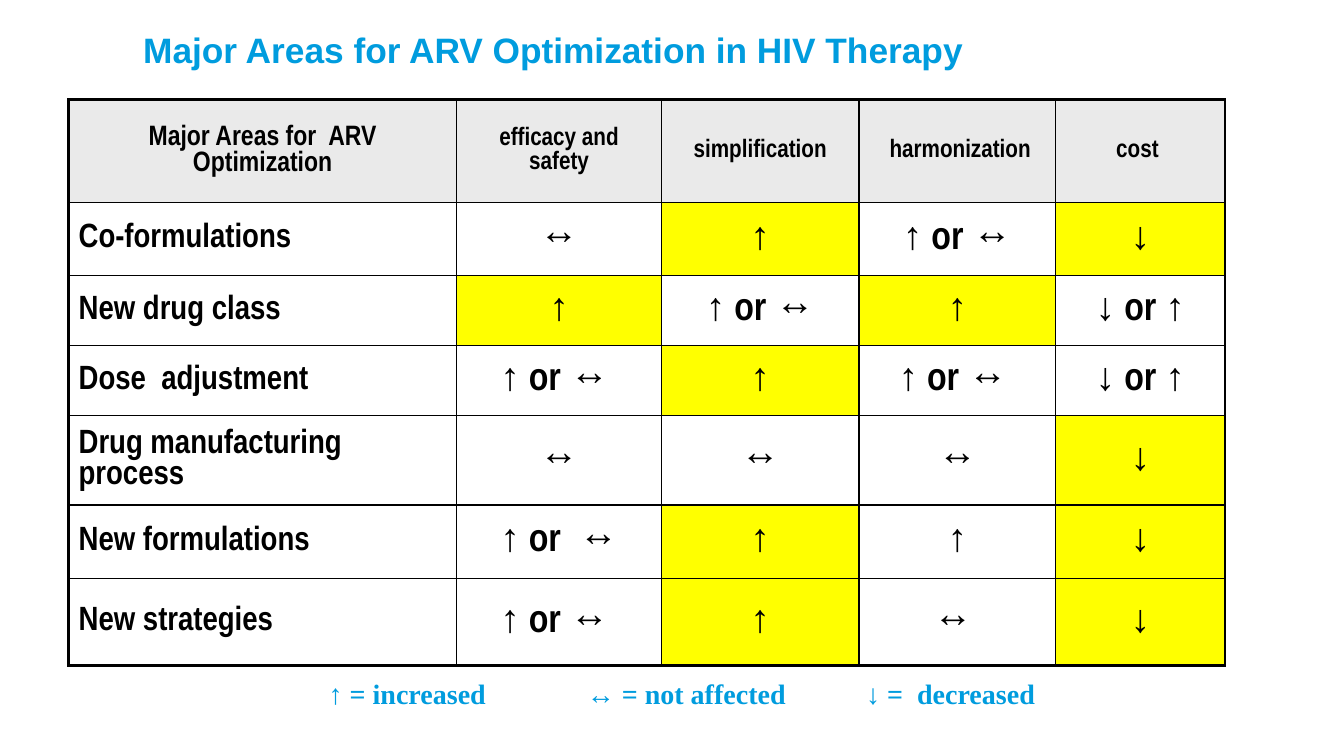
from lxml import etree
from pptx import Presentation
from pptx.dml.color import RGBColor
from pptx.enum import shapes, text
from pptx.oxml.ns import qn
from pptx.util import Inches, Pt

# Content
TITLE = "Major Areas for ARV Optimization in HIV Therapy"
HEAD = ["Major Areas for  ARV Optimization", "efficacy and safety",
        "simplification", " harmonization", "cost "]
ROWS = [
    ["Co-formulations", "↔", "↑", "↑ or ↔", "↓"],
    ["New drug class", "↑", "↑ or ↔", "↑", "↓ or ↑"],
    ["Dose  adjustment", "↑ or ↔ ", "↑", "↑ or ↔ ", "↓ or ↑"],
    ["Drug manufacturing process", "↔", "↔", "↔", "↓"],
    ["New formulations", "↑ or  ↔", "↑", "↑", "↓"],
    ["New strategies", "↑ or ↔ ", "↑", "↔ ", "↓"],
]
LEGEND = ["↑ = increased", "↔ = not affected", "↓ =  decreased"]
GAINS = {(1, 2), (1, 4), (2, 1), (2, 3), (3, 2), (4, 4),
         (5, 2), (5, 4), (6, 2), (6, 4)}  # highlighted (row, column)
WIDTHS = [3.85, 2.03, 1.96, 1.95, 1.68]
HEIGHTS = [1.02, 0.72, 0.7, 0.69, 0.89, 0.73, 0.86]
TABS = [2.56, 5.33]
BLUE, BLACK, WHITE = "009CDE", "000000", "FFFFFF"
GREY, YELLOW = "EAEAEA", "FFFF00"
LEFT, MID = text.PP_ALIGN.LEFT, text.PP_ALIGN.CENTER


def color(code):
    return RGBColor.from_string(code)


def paint(part, code):
    part.fill.solid()
    part.fill.fore_color.rgb = color(code)


def write(frame, words, size, font="Arial Narrow", ink=BLACK, align=LEFT,
          space=None, tabs=()):
    para = frame.paragraphs[0]
    para.alignment = align
    if space:
        para.line_spacing = space
    if tabs:
        stops = etree.SubElement(para._p.get_or_add_pPr(), qn("a:tabLst"))
        for stop in tabs:
            etree.SubElement(stops, qn("a:tab"), pos=str(Inches(stop)), algn="l")
    run = para.add_run()
    run.text = words
    run.font.size, run.font.name, run.font.bold = Pt(size), font, True
    run.font.color.rgb = color(ink)


def border(cell, widths):
    props = cell._tc.get_or_add_tcPr()
    for spot, (side, width) in enumerate(widths.items()):
        line = etree.Element(qn("a:ln" + side), w=str(Pt(width)))
        fill = etree.SubElement(line, qn("a:solidFill"))
        etree.SubElement(fill, qn("a:srgbClr"), val=BLACK)
        props.insert(spot, line)


def main():
    deck = Presentation()
    deck.slide_width, deck.slide_height = Inches(13.33), Inches(7.5)
    slide = deck.slides.add_slide(deck.slide_layouts[0])
    sub = slide.placeholders[1]._element
    sub.getparent().remove(sub)

    # Title
    title = slide.shapes.title
    title.left, title.top = Inches(1.32), Inches(0.28)
    title.width, title.height = Inches(9.7), Inches(0.48)
    frame = title.text_frame
    frame.vertical_anchor = text.MSO_ANCHOR.BOTTOM
    frame.auto_size = text.MSO_AUTO_SIZE.NONE
    write(frame, TITLE, 25.2, font="Arial", ink=BLUE, space=0.9)

    # Table
    grid = [HEAD] + ROWS
    table = slide.shapes.add_table(
        len(grid), len(HEAD), Inches(0.68), Inches(0.99),
        Inches(sum(WIDTHS)), Inches(sum(HEIGHTS))).table
    for col, width in zip(table.columns, WIDTHS):
        col.width = Inches(width)
    for row, height in zip(table.rows, HEIGHTS):
        row.height = Inches(height)
    last, end = len(grid) - 1, len(HEAD) - 1
    for r, line in enumerate(grid):
        for c, words in enumerate(line):
            cell = table.cell(r, c)
            cell.vertical_anchor = text.MSO_ANCHOR.MIDDLE
            if r == 0:
                size, fill = (18 if c else 20), GREY
            elif c == 0:
                size, fill = 24, None
            else:
                size, fill = 28, YELLOW if (r, c) in GAINS else WHITE
            if fill:
                paint(cell, fill)
            else:
                cell.fill.background()
            write(cell.text_frame, words, size,
                  align=LEFT if r and c == 0 else MID)
            edges = {"L": c == 0, "R": c == end, "T": r == 0, "B": r == last}
            border(cell, {side: 2.25 if outer else 1
                          for side, outer in edges.items()})

    # Legend
    key = slide.shapes.add_shape(
        shapes.MSO_SHAPE.RECTANGLE, Inches(1.97), Inches(6.66),
        Inches(9.57), Inches(0.44))
    key.shadow.inherit = False
    paint(key, WHITE)
    key.line.fill.background()
    frame = key.text_frame
    frame.word_wrap = True
    frame.margin_left = Inches(1.29)
    frame.vertical_anchor = text.MSO_ANCHOR.TOP
    frame.auto_size = text.MSO_AUTO_SIZE.SHAPE_TO_FIT_TEXT
    write(frame, "\t".join(LEGEND), 20, font="Times New Roman", ink=BLUE,
          tabs=TABS)

    deck.save("out.pptx")


if __name__ == "__main__":
    main()
